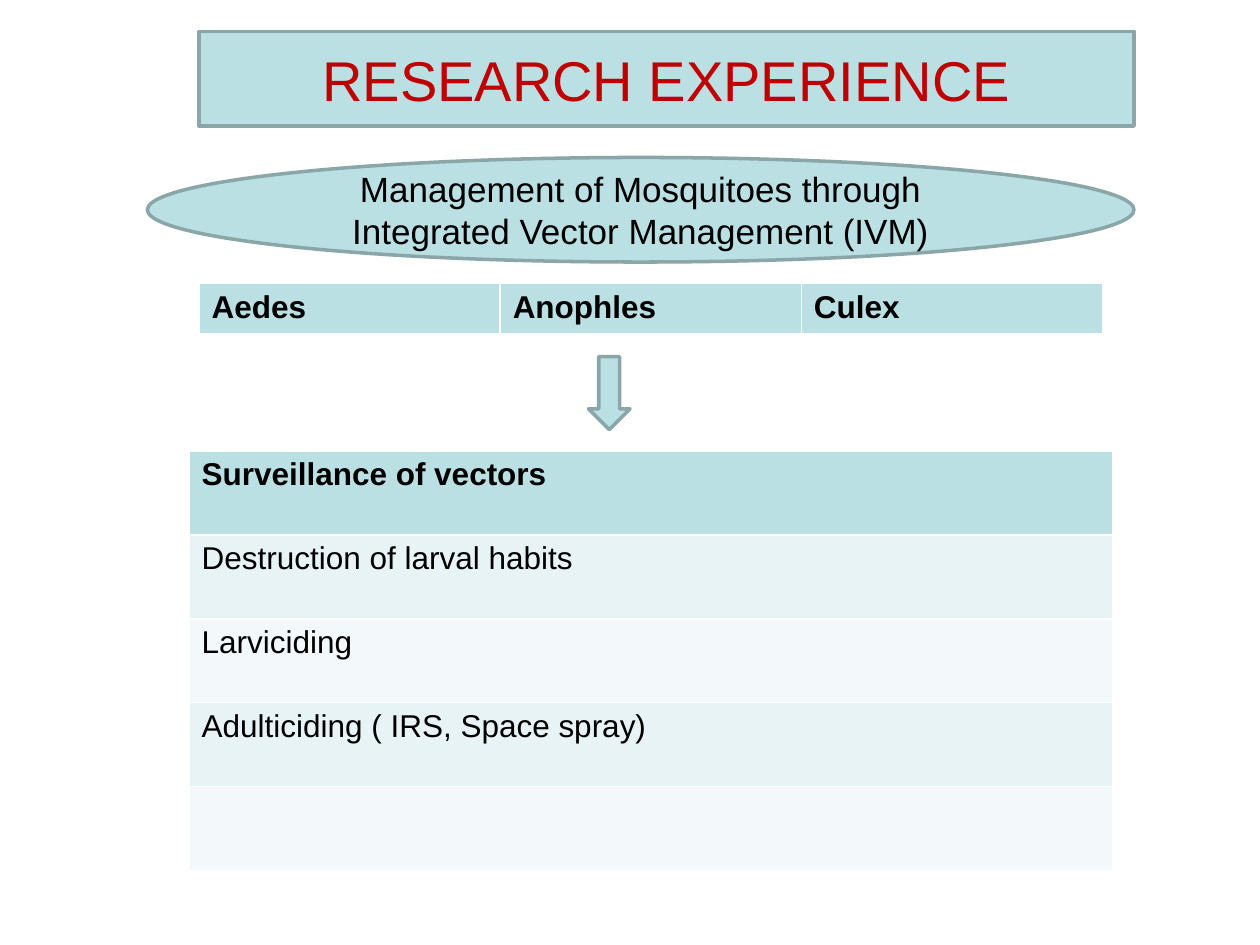
from dataclasses import dataclass

import pptx
import pptx.dml.color
import pptx.enum.shapes
import pptx.enum.text
import pptx.util
from pptx.util import Inches

TEAL = "BBE0E3"
OUTLINE = "8AA6A8"
BAND_DARK = "E7F3F4"
BAND_LIGHT = "F3F9FA"
BLACK = "000000"
RED = "C00000"


@dataclass
class Box:
    left: float
    top: float
    width: float
    height: float

    def lengths(self) -> tuple:
        return tuple(Inches(v) for v in (self.left, self.top, self.width, self.height))


@dataclass
class Grid:
    box: Box
    rows: list[list[str]]


def rgb(color: str) -> pptx.dml.color.RGBColor:
    return pptx.dml.color.RGBColor.from_string(color)


def paint(shape) -> None:
    shape.fill.solid()
    shape.fill.fore_color.rgb = rgb(TEAL)
    shape.line.color.rgb = rgb(OUTLINE)
    shape.line.width = pptx.util.Pt(2)


def style_paragraph(paragraph, size: int, color: str, bold: bool = False) -> None:
    font = paragraph.font
    font.name = "Arial"
    font.size = pptx.util.Pt(size)
    font.bold = bold
    font.color.rgb = rgb(color)


def write_centred(shape, text: str, size: int, color: str) -> None:
    frame = shape.text_frame
    frame.text = text
    frame.word_wrap = True
    frame.auto_size = pptx.enum.text.MSO_AUTO_SIZE.NONE
    frame.vertical_anchor = pptx.enum.text.MSO_ANCHOR.MIDDLE
    frame.paragraphs[0].alignment = pptx.enum.text.PP_ALIGN.CENTER
    style_paragraph(frame.paragraphs[0], size, color)


def add_painted_shape(slide, kind, box: Box):
    shape = slide.shapes.add_shape(kind, *box.lengths())
    shape.shadow.inherit = False
    paint(shape)
    return shape


def add_grid(slide, grid: Grid) -> None:
    """The default table style supplies the white rules between cells."""
    table = slide.shapes.add_table(
        len(grid.rows), len(grid.rows[0]), *grid.box.lengths()
    ).table
    for r, row in enumerate(grid.rows):
        fill = TEAL if r == 0 else (BAND_DARK if r % 2 else BAND_LIGHT)
        for c, text in enumerate(row):
            cell = table.cell(r, c)
            cell.text = text
            cell.fill.solid()
            cell.fill.fore_color.rgb = rgb(fill)
            style_paragraph(cell.text_frame.paragraphs[0], 18, BLACK, bold=r == 0)


def main() -> None:
    deck = pptx.Presentation()
    deck.slide_width, deck.slide_height = Inches(10), Inches(7.5)
    slide = deck.slides.add_slide(deck.slide_layouts[5])
    shapes = pptx.enum.shapes.MSO_SHAPE

    # Title in a rounded frame
    title = slide.shapes.title
    title.left, title.top, title.width, title.height = Box(1.58, 0.25, 7.42, 0.75).lengths()
    outline = pptx.oxml.parse_xml(
        '<a:prstGeom xmlns:a="http://schemas.openxmlformats.org/drawingml/2006/main"'
        ' prst="roundRect"><a:avLst/></a:prstGeom>'
    )
    title.element.spPr.insert(1, outline)
    paint(title)
    write_centred(title, "RESEARCH EXPERIENCE", 32, RED)

    # Research topic
    topic = add_painted_shape(slide, shapes.OVAL, Box(1.17, 1.25, 7.83, 0.83))
    write_centred(
        topic,
        "Management of Mosquitoes through Integrated Vector Management (IVM)",
        20,
        BLACK,
    )

    # Mosquito genera, leading down to the control measures
    add_grid(slide, Grid(Box(1.58, 2.25, 7.17, 0.4), [["Aedes", "Anophles", "Culex"]]))
    add_painted_shape(slide, shapes.DOWN_ARROW, Box(4.67, 2.83, 0.33, 0.58))
    measures = [
        "Surveillance of vectors",
        "Destruction of larval habits",
        "Larviciding",
        "Adulticiding ( IRS, Space spray)",
        "",
    ]
    add_grid(slide, Grid(Box(1.5, 3.58, 7.33, 3.33), [[m] for m in measures]))

    deck.save("out.pptx")


if __name__ == "__main__":
    main()
